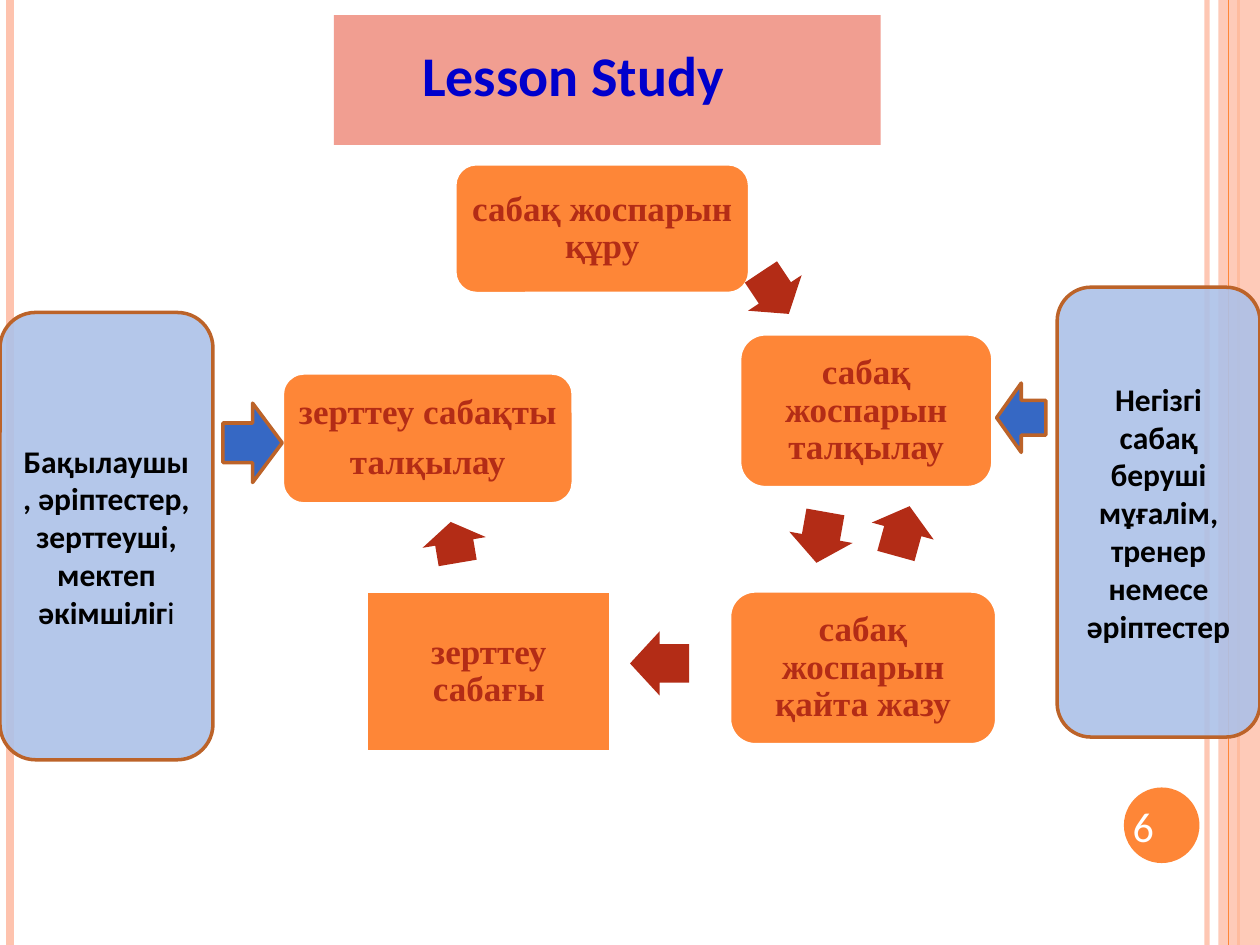
from dataclasses import dataclass

from lxml import etree
from pptx import Presentation
from pptx.dml.color import RGBColor
from pptx.enum.shapes import MSO_CONNECTOR, MSO_SHAPE
from pptx.enum.text import MSO_ANCHOR, MSO_AUTO_SIZE, PP_ALIGN
from pptx.oxml.ns import qn
from pptx.util import Inches, Pt

RECT, ROUND = MSO_SHAPE.RECTANGLE, MSO_SHAPE.ROUNDED_RECTANGLE
OVAL, ARROW = MSO_SHAPE.OVAL, MSO_SHAPE.RIGHT_ARROW
STRAIGHT = MSO_CONNECTOR.STRAIGHT
LEFT, CENTER = PP_ALIGN.LEFT, PP_ALIGN.CENTER
MIDDLE, NO_FIT = MSO_ANCHOR.MIDDLE, MSO_AUTO_SIZE.NONE
COLS, ROWS = 100, 75
CELL = Inches(10) / COLS


@dataclass(frozen=True)
class Theme:
    orange: str = "FE8637"
    peach: str = "FEC3AE"
    red: str = "B32C16"
    salmon: str = "F19E91"
    title: str = "0000CC"
    panel: str = "ACC1E8"
    blue: str = "3668C4"
    edge: str = "BC6329"
    black: str = "000000"
    white: str = "FFFFFF"
    sans: str = "Calibri"
    serif: str = "Times New Roman"
    title_size: int = 32
    number_size: int = 24
    step_size: int = 20
    role_size: int = 18


T = Theme()


def grid(*cells):
    return [round(c * CELL) for c in cells]


def within(box, x, y, w, h):
    return box[0] + x, box[1] + y, w, h


def set_alpha(fmt, percent):
    clr = fmt.find(".//" + qn("a:srgbClr"))
    etree.SubElement(clr, qn("a:alpha")).set("val", str(percent * 1000))


def add_block(s, kind, box, fill, line=None, alpha=None, rotation=0):
    sp = s.shapes.add_shape(kind, *grid(*box))
    sp.shadow.inherit = False
    sp.rotation = rotation
    sp.fill.solid()
    sp.fill.fore_color.rgb = RGBColor.from_string(fill)
    if alpha:
        set_alpha(sp._element.spPr.find(qn("a:solidFill")), alpha)
    if line:
        sp.line.color.rgb = RGBColor.from_string(line)
        sp.line.width = Pt(2)
    else:
        sp.line.fill.background()
    return sp


def write(sp, *paragraphs, size, color, font=T.sans, bold=True, align=CENTER,
          spacing=None, before=None, after=None, inset=None):
    tf = sp.text_frame
    tf.word_wrap = True
    tf.auto_size = NO_FIT
    tf.vertical_anchor = MIDDLE
    if inset is not None:
        tf.margin_left = tf.margin_right = Inches(inset)
        tf.margin_top = tf.margin_bottom = Inches(inset)
    for i, text in enumerate(paragraphs):
        p = tf.add_paragraph() if i else tf.paragraphs[0]
        p.alignment = align
        p.line_spacing = spacing
        p.space_before = before
        p.space_after = after
        r = p.add_run()
        r.text = text
        r.font.name, r.font.size, r.font.bold = font, Pt(size), bold
        r.font.color.rgb = RGBColor.from_string(color)
    return tf


def add_stripe(s, x, color, width, alpha=None):
    c = s.shapes.add_connector(STRAIGHT, *grid(x, 0, x, ROWS))
    c.line.color.rgb = RGBColor.from_string(color)
    c.line.width = Pt(width)
    if alpha:
        set_alpha(c._element.spPr.find(qn("a:ln")), alpha)
    etree.SubElement(c._element.spPr, qn("a:effectLst"))


def add_frame(s):
    add_stripe(s, 95.8, T.peach, 3, alpha=93)
    add_stripe(s, 0.8, T.peach, 4.5)
    add_stripe(s, 98.3, T.orange, 1.5)
    add_block(s, RECT, (96.7, 0, 3.3, ROWS), T.peach, alpha=87)
    add_stripe(s, 97.5, T.orange, 0.75)


def add_title(s, box):
    sp = s.shapes.title
    sp.left, sp.top, sp.width, sp.height = grid(*box)
    sp.fill.solid()
    sp.fill.fore_color.rgb = RGBColor.from_string(T.salmon)
    tf = write(sp, "Lesson Study", size=T.title_size, color=T.title,
               align=LEFT, spacing=0.8, before=Pt(6))
    tf.margin_left = Inches(0.7)


def add_cycle(s, box):
    steps = [
        (ROUND, (14.1, 0, 23.4, 10.3), ["сабақ жоспарын құру"]),
        (ROUND, (36.7, 13.5, 20.1, 12.2), ["сабақ жоспарын талқылау"]),
        (ROUND, (35.9, 33.9, 21.2, 12.2), ["сабақ жоспарын қайта жазу"]),
        (RECT, (7.1, 33.9, 19.4, 12.8), ["зерттеу сабағы"]),
        (ROUND, (0.4, 16.6, 23.1, 10.4), ["зерттеу сабақты", "талқылау"]),
    ]
    arrows = [
        (37.5, 7.7, 4, 56.4),
        (41.1, 27.1, 4.1, 100.1),
        (47.6, 26.6, 4.1, 285.4),
        (28, 37.1, 4.7, 180),
        (12.4, 27.5, 3.3, 260.4),
    ]
    for kind, place, lines in steps:
        sp = add_block(s, kind, within(box, *place), T.orange, line=T.white)
        write(sp, *lines, size=T.step_size, color=T.red, font=T.serif,
              spacing=0.9, after=Pt(7), inset=0.05)
    for x, y, w, angle in arrows:
        sp = add_block(s, ARROW, within(box, x, y, w, 5.1), T.red, rotation=angle)
        sp.adjustments[0] = 0.6


def add_role(s, box, text, arrow, angle=0, light_tail=""):
    sp = add_block(s, ROUND, box, T.panel, line=T.edge, alpha=90)
    tf = write(sp, text, size=T.role_size, color=T.black)
    if light_tail:
        r = tf.paragraphs[0].add_run()
        r.text = light_tail
        r.font.name, r.font.size, r.font.bold = T.sans, Pt(T.role_size), False
        r.font.color.rgb = RGBColor.from_string(T.black)
    add_block(s, ARROW, within(box, *arrow), T.blue, line=T.edge, rotation=angle)


def add_number(s, box, number):
    add_block(s, OVAL, box, T.orange)
    label = s.shapes.add_textbox(*grid(*within(box, -0.3, 0.2, 6.7, 5.7)))
    write(label, number, size=T.number_size, color=T.white, bold=False, align=LEFT)


def main():
    prs = Presentation()
    prs.slide_width, prs.slide_height = grid(COLS, ROWS)
    s = prs.slides.add_slide(prs.slide_layouts[5])
    add_frame(s)
    add_title(s, (26.5, 1.2, 43.4, 10.3))
    add_cycle(s, (22, 13, 57, 47))
    add_role(s, (83.9, 22.8, 16.1, 35.7),
             "Негізгі сабақ беруші мұғалім, тренер немесе әріптестер",
             (-4.8, 7.6, 3.9, 5.5), angle=180)
    add_role(s, (0, 24.8, 16.9, 35.5),
             "Бақылаушы, әріптестер, зерттеуші, мектеп әкімшіліг",
             (17.7, 7.2, 4.7, 6.3), light_tail="і")
    add_number(s, (89.2, 62.5, 6, 6), "6")
    prs.save("out.pptx")


if __name__ == "__main__":
    main()
